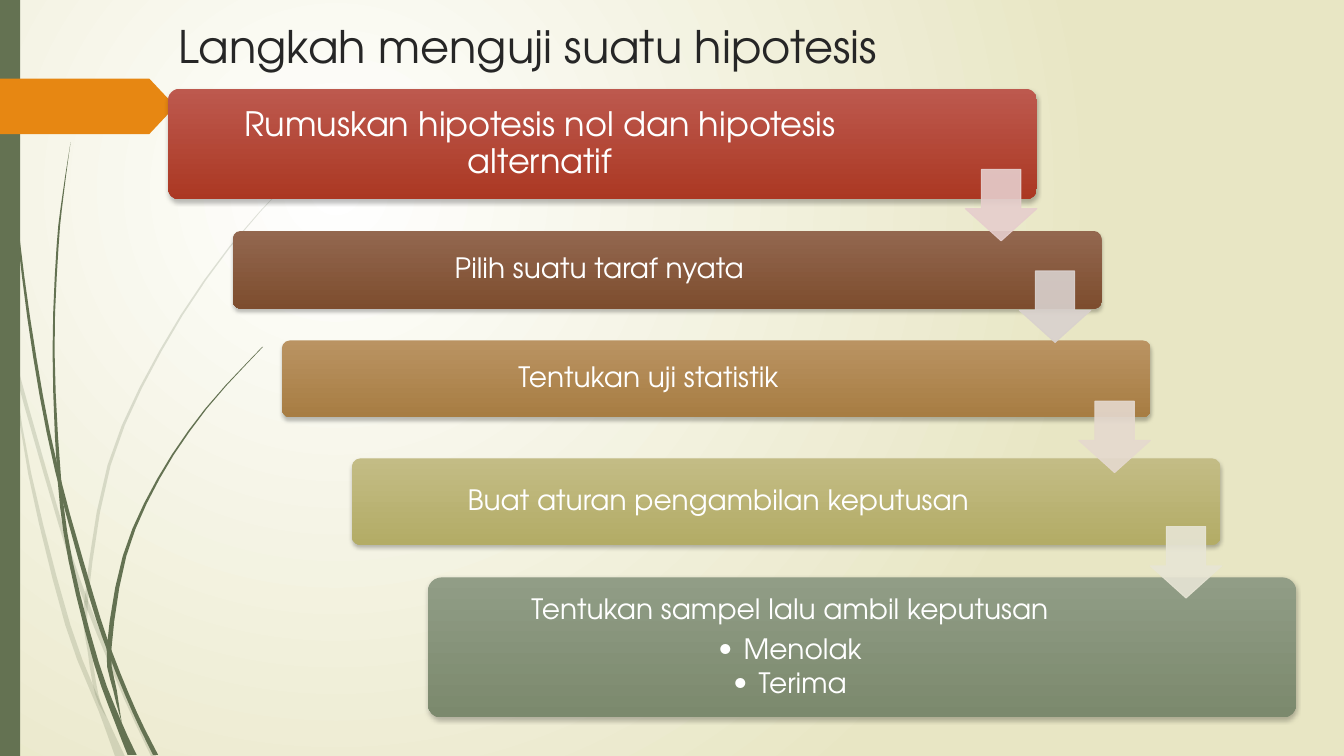
"""Build a slide showing the steps of testing a hypothesis as a descending staircase."""
from dataclasses import dataclass

import lxml.etree
import pptx
import pptx.dml.color
import pptx.enum.shapes
import pptx.enum.text
import pptx.oxml
import pptx.oxml.ns
import pptx.util

Cm = pptx.util.Cm
Pt = pptx.util.Pt
MSO_SHAPE = pptx.enum.shapes.MSO_SHAPE
qn = pptx.oxml.ns.qn
FONT = "TeX Gyre Adventor"
GREEN = "647252"
BAND_WIDTH = 21.89
ARROW_SIZE = 1.8
CURVE_STEPS = 3


@dataclass
class Stem:
    joints: tuple[int, ...]
    knots: list[tuple[float, float, float]]
    opacity: int = 100


@dataclass
class Band:
    left: float
    top: float
    height: float
    light: str
    dark: str
    text: str
    size: int = 20
    inset: float = 0.2
    gutter: float = 3.62


@dataclass
class Arrow:
    left: float
    top: float
    color: str


STEMS = [
    Stem((1, 3), [(0.02, 7.4, 0.08), (0.3, 8.9, 0.1), (1.52, 13.2, 0.1), (2.17, 15.15, 0.11),
                  (3.18, 17.6, 0.11), (3.87, 19.05, 0.13)], 20),
    Stem((3,), [(0.28, 8.89, 0), (0.75, 11.94, 0.08), (1.71, 15.75, 0.13), (2.55, 17.9, 0.14),
                (3.02, 19.05, 0.25)], 20),
    Stem((4,), [(7.92, 3.89, 0), (5.8, 6.21, 0.04), (4.04, 8.85, 0.06), (2.75, 11.72, 0.08),
                (2.17, 15.15, 0.09), (2.26, 16.41, 0.1), (2.44, 17.5, 0.08), (2.67, 18.06, 0)], 20),
    Stem((4, 6), [(0.09, 0, 0.03), (0.19, 2.78, 0.04), (0.46, 5.92, 0.05), (0.88, 9.02, 0.08),
                  (1.43, 11.85, 0.09), (2.3, 15.01, 0.12), (2.78, 16.45, 0.11),
                  (3.4, 17.96, 0.11), (3.92, 19.02, 0.13)]),
    Stem((4, 7), [(1.78, 3.58, 0), (1.59, 4.9, 0.03), (1.45, 6.22, 0.05), (1.35, 8.86, 0.05),
                  (1.49, 12, 0.09), (1.78, 14.14, 0.1), (2.43, 16.71, 0.13), (2.98, 18.2, 0.17),
                  (3.33, 19.02, 0.23)]),
    Stem((4,), [(6.62, 8.74, 0.02), (5.19, 10.3, 0.04), (3.99, 12.07, 0.06), (3.14, 14.01, 0.09),
                (2.75, 16.35, 0.12), (2.9, 17.4, 0.09), (3.07, 18.21, 0)]),
]
BANDS = [
    Band(4.24, 2.24, 2.78, "BD594E", "AB3823",
         "Rumuskan hipotesis nol dan hipotesis alternatif", 24, 0.25, 3.4),
    Band(5.87, 5.82, 1.96, "93674F", "7D4D2E", "Pilih suatu taraf nyata"),
    Band(7.11, 8.58, 1.93, "BA9362", "A77D43", "Tentukan uji statistik"),
    Band(8.87, 11.55, 2.18, "C3BC85", "B3AC66", "Buat aturan pengambilan keputusan"),
    Band(10.78, 14.55, 3.53, "919D86", "7B896D",
         "Tentukan sampel lalu ambil keputusan\nMenolak\nTerima", gutter=3.83),
]
ARROWS = [
    Arrow(24.33, 4.27, "E6CECD"),
    Arrow(25.69, 6.83, "D9D1CE"),
    Arrow(27.19, 10.11, "E5D9CF"),
    Arrow(28.99, 13.27, "E7E5D5"),
]


def rgb(color: str) -> pptx.dml.color.RGBColor:
    return pptx.dml.color.RGBColor.from_string(color)


def paint(fill, color: str, opacity: int = 100) -> None:
    fill.solid()
    fill.fore_color.rgb = rgb(color)
    if opacity < 100:
        clr = fill._xPr.find(qn("a:solidFill"))[0]
        lxml.etree.SubElement(clr, qn("a:alpha"), val=str(opacity * 1000))


def grade(fill, start: str, end: str) -> None:
    fill.gradient()
    for stop, color, position in zip(fill.gradient_stops, (start, end), (0, 1)):
        stop.color.rgb = rgb(color)
        stop.position = position


def style_text(p, size: int, color: str) -> None:
    for r in p.runs:
        r.font.name = FONT
        r.font.size = Pt(size)
        r.font.color.rgb = rgb(color)


def set_background(s) -> None:
    fill = s.background.fill
    grade(fill, "FFFFFF", "E8E6C4")
    grad = fill._xPr.find(qn("a:gradFill"))
    grad.remove(grad.find(qn("a:lin")))
    circle = lxml.etree.SubElement(grad, qn("a:path"), path="circle")
    lxml.etree.SubElement(circle, qn("a:fillToRect"), l="50000", t="50000", r="100000", b="100000")


def smooth(knots: list[tuple[float, float, float]]) -> list[tuple[float, ...]]:
    padded = [knots[0], *knots, knots[-1]]
    points = []
    for a, b, c, d in zip(padded, padded[1:], padded[2:], padded[3:]):
        for t in (i / CURVE_STEPS for i in range(CURVE_STEPS)):
            points.append(tuple(
                (2 * q + (r - p) * t + (2 * p - 5 * q + 4 * r - u) * t ** 2
                 + (3 * q - p - 3 * r + u) * t ** 3) / 2
                for p, q, r, u in zip(a, b, c, d)))
    return points + [knots[-1]]


def add_stem(s, stem: Stem) -> None:
    curve = smooth(stem.knots)
    ends = (0, *stem.joints, len(stem.knots) - 1)
    for first, last in zip(ends, ends[1:]):
        points = curve[first * CURVE_STEPS:last * CURVE_STEPS + 1]
        outline = [(Cm(x - w / 2), Cm(y)) for x, y, w in points]
        outline += [(Cm(x + w / 2), Cm(y)) for x, y, w in reversed(points)]
        builder = s.shapes.build_freeform(*outline[0])
        builder.add_line_segments(outline[1:], close=True)
        sp = builder.convert_to_shape()
        sp.shadow.inherit = False
        sp.line.fill.background()
        paint(sp.fill, GREEN, stem.opacity)


def add_preset(s, kind, left: float, top: float, width: float, height: float, *adjustments: float):
    sp = s.shapes.add_shape(kind, Cm(left), Cm(top), Cm(width), Cm(height))
    sp.shadow.inherit = False
    sp.line.fill.background()
    for i, value in enumerate(adjustments):
        sp.adjustments[i] = value
    return sp


def add_band(s, band: Band) -> None:
    sp = add_preset(s, MSO_SHAPE.ROUNDED_RECTANGLE, band.left, band.top, BAND_WIDTH, band.height, 0.1)
    grade(sp.fill, band.light, band.dark)
    sp.fill.gradient_angle = 270
    effects = sp._element.spPr.find(qn("a:effectLst"))
    shadow = lxml.etree.SubElement(effects, qn("a:outerShdw"), blurRad=str(Pt(3)), dist=str(Pt(2)),
                                   dir="5400000", algn="ctr", rotWithShape="0")
    black = lxml.etree.SubElement(shadow, qn("a:srgbClr"), val="000000")
    lxml.etree.SubElement(black, qn("a:alpha"), val="25000")
    tf = sp.text_frame
    tf.word_wrap = True
    tf.vertical_anchor = pptx.enum.text.MSO_ANCHOR.MIDDLE
    tf.margin_left = tf.margin_top = tf.margin_bottom = Cm(band.inset)
    tf.margin_right = Cm(band.gutter)
    tf.text = band.text
    for i, p in enumerate(tf.paragraphs):
        p.alignment = pptx.enum.text.PP_ALIGN.CENTER
        p.line_spacing = 0.9
        p.space_after = Pt(band.size * (0.15 if i else 0.35))
        style_text(p, band.size, "FFFFFF")
        if i:
            p.level = 1
            pPr = p._p.get_or_add_pPr()
            pPr.set("marL", str(Cm(0.64)))
            pPr.set("indent", str(-Cm(0.64)))
            lxml.etree.SubElement(pPr, qn("a:buFont"), typeface=FONT)
            lxml.etree.SubElement(pPr, qn("a:buChar"), char="•")


def add_arrow(s, arrow: Arrow) -> None:
    sp = add_preset(s, MSO_SHAPE.DOWN_ARROW, arrow.left, arrow.top, ARROW_SIZE, ARROW_SIZE, 0.55, 0.45)
    paint(sp.fill, arrow.color, 90)
    sp.line.width = Pt(0.75)
    paint(sp.line.fill, arrow.color, 90)


def main() -> None:
    prs = pptx.Presentation()
    prs.slide_width, prs.slide_height = Cm(33.87), Cm(19.05)
    s = prs.slides.add_slide(prs.slide_layouts[6])
    set_background(s)
    for stem in STEMS:
        add_stem(s, stem)
    paint(add_preset(s, MSO_SHAPE.RECTANGLE, 0, 0, 0.51, 19.05).fill, GREEN)
    paint(add_preset(s, MSO_SHAPE.PENTAGON, 0, 1.98, 4.42, 1.4, 0.47).fill, "E78712")
    tf = s.shapes.add_textbox(Cm(4.24), Cm(0.34), Cm(24.77), Cm(2.08)).text_frame
    tf.word_wrap = True
    tf.text = "Langkah menguji suatu hipotesis"
    style_text(tf.paragraphs[0], 32, "262626")
    for band in BANDS:
        add_band(s, band)
    for arrow in ARROWS:
        add_arrow(s, arrow)
    prs.save("out.pptx")


if __name__ == "__main__":
    main()
